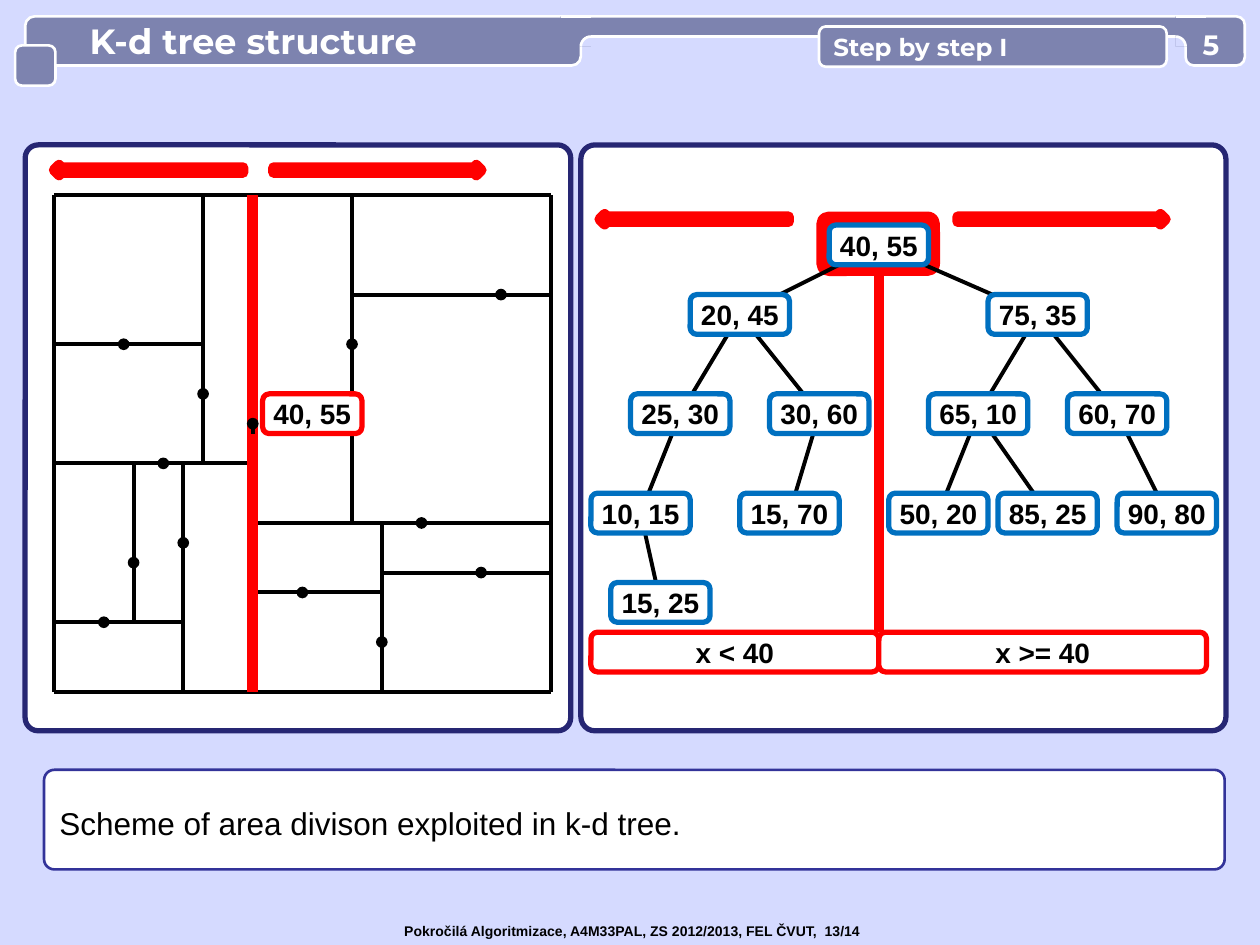
from math import cos, pi, sin

from lxml.etree import SubElement
from pptx import Presentation
from pptx.dml.color import RGBColor
from pptx.enum.shapes import MSO_CONNECTOR, MSO_SHAPE
from pptx.enum.text import MSO_ANCHOR, PP_ALIGN
from pptx.oxml.ns import qn
from pptx.util import Inches, Pt

BLACK, WHITE, RED, BLUE = "000000", "FFFFFF", "FF0000", "0070C0"
BACKGROUND, BAR, FRAME, NOTE_LINE = "D5DAFF", "7D83AF", "262673", "333399"

CELL = 3.94 / 50                 # both diagrams share one grid
AREA, TREE = (0.43, 1.55), (4.69, 1.55)
SIDE, ROOT_X = 50, 20
NODE_W, NODE_H = 10, 4

# split start, split end, point on it, offset where the point's stem begins
SPLITS = [
    ((20, 33), (50, 33), (37, 33), (-4, 0)),
    ((30, 33), (30, 0), (30, 15), (0, 6)),
    ((30, 10), (50, 10), (45, 10), (-4, 0)),
    ((33, 50), (33, 33), (33, 45), (0, -4)),
    ((33, 38), (50, 38), (43, 38), (-4, 0)),
    ((20, 40), (33, 40), (25, 40), (-4, 0)),
    ((15, 27), (15, 0), (15, 20), (0, 6)),
    ((0, 27), (20, 27), (11, 27), (-4, 0)),
    ((0, 15), (15, 15), (7, 15), (-4, 0)),
    ((13, 50), (13, 27), (13, 35), (0, 6)),
    ((0, 43), (13, 43), (5, 43), (-4, 0)),
    ((8, 43), (8, 27), (8, 37), (0, -4)),
]
BORDERS = [((0, 50), (0, 0)), ((50, 50), (50, 0)),
           ((0, 50), (50, 50)), ((0, 0), (50, 0))]

# label: (column, row, parent)
NODES = {
    "40, 55": (29, 5, None),
    "20, 45": (15, 12, "40, 55"),
    "75, 35": (45, 12, "40, 55"),
    "25, 30": (9, 22, "20, 45"),
    "30, 60": (23, 22, "20, 45"),
    "65, 10": (39, 22, "75, 35"),
    "60, 70": (53, 22, "75, 35"),
    "10, 15": (5, 32, "25, 30"),
    "15, 70": (20, 32, "30, 60"),
    "50, 20": (35, 32, "65, 10"),
    "85, 25": (46, 32, "65, 10"),
    "90, 80": (58, 32, "60, 70"),
    "15, 25": (7, 41, "10, 15"),
}
CONDITIONS = [("x < 40", 0, 29), ("x >= 40", 29, 33)]
ARROWS = [(7.6, 1.7, 1.65, False), (4.76, 1.7, 1.5, True),
          (0.43, 1.31, 1.5, True), (2.17, 1.31, 1.65, False)]

deck = Presentation()
deck.slide_width, deck.slide_height = Inches(10), Inches(7.5)
page = deck.slides.add_slide(deck.slide_layouts[6])


def color(value):
    return RGBColor.from_string(value)


def paint(shape, fill=None, line=None, weight=1.5):
    shape.shadow.inherit = False
    if fill:
        shape.fill.solid()
        shape.fill.fore_color.rgb = color(fill)
    else:
        shape.fill.background()
    if line:
        shape.line.color.rgb = color(line)
        shape.line.width = Pt(weight)
    else:
        shape.line.fill.background()


def add_box(left, top, width, height, kind=MSO_SHAPE.ROUNDED_RECTANGLE,
            corner=None, **look):
    box = page.shapes.add_shape(kind, *map(Inches, (left, top, width, height)))
    if corner is not None:
        box.adjustments[0] = corner
    paint(box, **look)
    return box


def add_line(start, end, line=BLACK, weight=2.25, dot=False):
    connector = page.shapes.add_connector(
        MSO_CONNECTOR.STRAIGHT, *map(Inches, (*start, *end)))
    connector.line.color.rgb = color(line)
    connector.line.width = Pt(weight)
    properties = connector._element.spPr
    if dot:
        SubElement(properties.find(qn("a:ln")), qn("a:tailEnd"), type="oval")
    SubElement(properties, qn("a:effectLst"))


def write(box, text, size=16, font="Arial", ink=BLACK, bold=True, align=PP_ALIGN.LEFT,
          anchor=MSO_ANCHOR.MIDDLE, margins=(0.1, 0.05), wrap=True, spacing=None):
    frame = box.text_frame
    frame.word_wrap = wrap
    frame.vertical_anchor = anchor
    frame.margin_left = frame.margin_right = Inches(margins[0])
    frame.margin_top = frame.margin_bottom = Inches(margins[1])
    para = frame.paragraphs[0]
    para.alignment = align
    para.line_spacing = spacing
    span = para.add_run()
    span.text = text
    span.font.size, span.font.name, span.font.bold = Pt(size), font, bold
    span.font.color.rgb = color(ink)


def place(origin, cell):
    return tuple(start + CELL * step for start, step in zip(origin, cell))


def add_label(text, left, top, columns=NODE_W, line=BLUE):
    box = add_box(left, top, columns * CELL, NODE_H * CELL,
                  fill=WHITE, line=line, weight=3)
    write(box, text, align=PP_ALIGN.CENTER, margins=(0, 0))


def add_split(start, end, **look):
    add_line(place(AREA, start), place(AREA, end), **look)


def add_fillet(edge, side):
    """Round the inner corner where the thin bar meets a tab; side is 1 or -1."""
    radius, top = 0.08, 0.29
    inner, outer = edge + side * radius, edge - side * 0.16
    add_box(min(inner, outer), 0.13, 0.24, 0.24, MSO_SHAPE.RECTANGLE, fill=BAR)
    add_line((outer, 0.13), (inner, 0.13), line=WHITE, weight=1.5)
    angles = [step * pi / 16 for step in range(9)]
    curve = [(Inches(inner - side * radius * sin(angle)),
              Inches(top + radius * (1 - cos(angle)))) for angle in angles]
    corner = (Inches(inner), Inches(top + radius))
    for points, closed, look in ((curve + [corner], True, {"fill": BACKGROUND}),
                                 (curve, False, {"line": WHITE})):
        builder = page.shapes.build_freeform(*points[0])
        builder.add_line_segments(points[1:], close=closed)
        paint(builder.convert_to_shape(), **look)


page.background.fill.solid()
page.background.fill.fore_color.rgb = color(BACKGROUND)

# Panels and the highlighted root
for left, width in ((4.61, 5.12), (0.2, 4.33)):
    add_box(left, 1.15, width, 4.65, corner=0.024, fill=WHITE, line=FRAME, weight=3)
add_box(6.5, 1.7, 0.94, 0.47, fill=RED, line=RED, weight=3)
add_line(place(TREE, (29, 44)), place(TREE, (29, 5)), line=RED, weight=6)

# Divided area
for start, end, point, stem in SPLITS:
    add_split(start, end)
    add_split((point[0] + stem[0], point[1] + stem[1]), point, dot=True)
for start, end in BORDERS:
    add_split(start, end)
add_split((ROOT_X, SIDE), (ROOT_X, 0), line=RED, weight=6)
add_label("40, 55", *place(AREA, (ROOT_X + 1, 20)), line=RED)

# Tree
for column, row, parent in NODES.values():
    if parent:
        add_line(place(TREE, NODES[parent][:2]), place(TREE, (column, row)))
for text, (column, row, parent) in NODES.items():
    add_label(text, *place(TREE, (column - NODE_W / 2, row - NODE_H / 2)))
for text, column, columns in CONDITIONS:
    add_label(text, *place(TREE, (column, 44)), columns=columns, line=RED)
add_split((ROOT_X, 24), (ROOT_X, 23), dot=True)

note = add_box(0.35, 6.11, 9.37, 0.79, corner=0.103, fill=WHITE, line=NOTE_LINE)
write(note, "Scheme of area divison exploited in k-d tree.", size=18, bold=False,
      spacing=1.2)

# Header
bar = {"fill": BAR, "line": WHITE}
heading = {"font": "Montserrat", "ink": WHITE}
title = add_box(0.2, 0.13, 4.41, 0.39, corner=0.188, **bar)
write(title, "K-d tree structure", size=20, margins=(0.49, 0.05), **heading)
add_box(4.61, 0.13, 4.88, 0.16, corner=0.5, **bar)
add_fillet(4.61, 1)
add_box(0.12, 0.36, 0.32, 0.32, corner=0.17, **bar)
add_box(9.41, 0.13, 0.47, 0.39, corner=0.17, **bar)
add_fillet(9.41, -1)
subtitle = add_box(6.5, 0.21, 2.76, 0.32, corner=0.17, **bar)
write(subtitle, "Step by step I", size=14, **heading)
number = page.shapes.add_textbox(*map(Inches, (9.41, 0.22, 0.4, 0.27)))
write(number, "5", align=PP_ALIGN.CENTER, margins=(0, 0), **heading)

footer = page.shapes.add_textbox(*map(Inches, (3.11, 7.27, 3.9, 0.24)))
write(footer, "Pokročilá Algoritmizace, A4M33PAL, ZS 2012/2013, FEL ČVUT,  13/14",
      size=8, anchor=MSO_ANCHOR.TOP, wrap=False)

for left, top, width, flipped in ARROWS:
    arrow = add_box(left, top, width, 0.08, MSO_SHAPE.RIGHT_ARROW,
                    fill=RED, line=RED, weight=6)
    if flipped:
        arrow._element.spPr.find(qn("a:xfrm")).set("flipH", "1")

deck.save("out.pptx")
